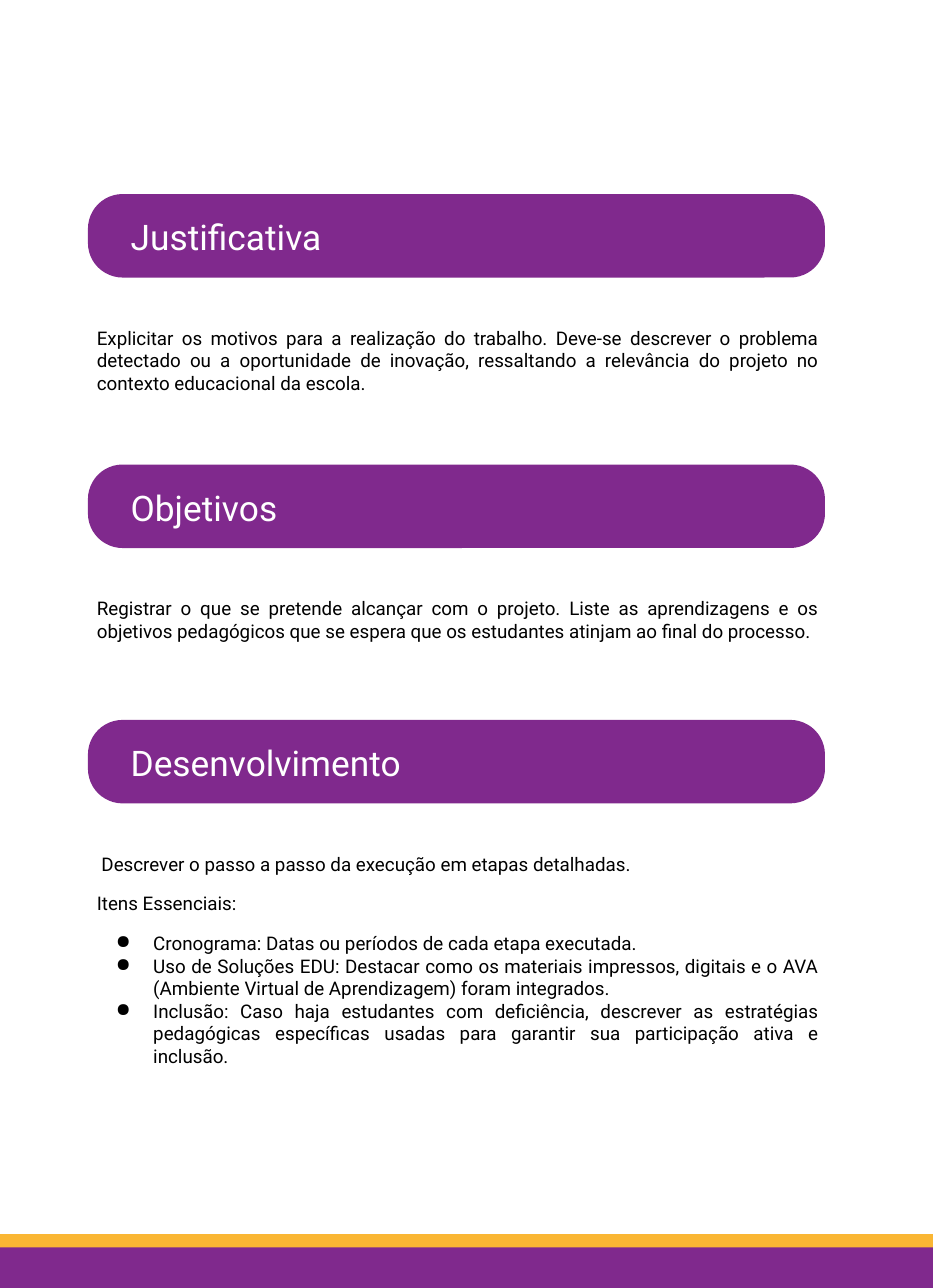
from lxml import etree
from pptx import Presentation
from pptx.dml.color import RGBColor
from pptx.enum.shapes import MSO_SHAPE
from pptx.enum.text import MSO_ANCHOR, MSO_AUTO_SIZE, PP_ALIGN
from pptx.oxml.ns import qn
from pptx.util import Cm, Pt

RECT, ROUND = MSO_SHAPE.RECTANGLE, MSO_SHAPE.ROUNDED_RECTANGLE
TOP, FIXED = MSO_ANCHOR.TOP, MSO_AUTO_SIZE.NONE
LEFT, JUSTIFY = PP_ALIGN.LEFT, PP_ALIGN.JUSTIFY

PURPLE = RGBColor(0x80, 0x29, 0x8D)
ORANGE = RGBColor(0xFA, 0xB6, 0x33)
WHITE = RGBColor(0xFF, 0xFF, 0xFF)
BLACK = RGBColor(0x00, 0x00, 0x00)

# Bar top, body height, heading, paragraphs as (text, space before, bullet)
SECTIONS = [
    (4.37, 4.93, "Justificativa", [
        ("Explicitar os motivos para a realização do trabalho. Deve-se "
         "descrever o problema detectado ou a oportunidade de inovação, "
         "ressaltando a relevância do projeto no contexto educacional da "
         "escola.", 0, False),
    ]),
    (10.46, 3.35, "Objetivos", [
        ("Registrar o que se pretende alcançar com o projeto. Liste as "
         "aprendizagens e os objetivos pedagógicos que se espera que os "
         "estudantes atinjam ao final do processo.", 0, False),
    ]),
    (16.21, 7.21, "Desenvolvimento", [
        (" Descrever o passo a passo da execução em etapas detalhadas.",
         0, False),
        ("Itens Essenciais:", 11, False),
        ("Cronograma: Datas ou períodos de cada etapa executada.", 11, True),
        ("Uso de Soluções EDU: Destacar como os materiais impressos, "
         "digitais e o AVA (Ambiente Virtual de Aprendizagem) foram "
         "integrados.", 0, True),
        ("Inclusão: Caso haja estudantes com deficiência, descrever as "
         "estratégias pedagógicas específicas usadas para garantir sua "
         "participação ativa e inclusão.", 0, True),
    ]),
]


class Page:
    font = "Roboto"

    def __init__(self, slide):
        self.shapes = slide.shapes

    def block(self, kind, x, y, w, h, color):
        shape = self.shapes.add_shape(kind, Cm(x), Cm(y), Cm(w), Cm(h))
        shape.shadow.inherit = False
        shape.fill.solid()
        shape.fill.fore_color.rgb = color
        shape.line.fill.background()
        return shape

    def frame(self, box):
        """Give a text box its margins, wrapping and top anchor."""
        frame = box.text_frame
        frame.word_wrap = True
        frame.auto_size = FIXED
        frame.vertical_anchor = TOP
        frame.margin_left = frame.margin_right = Cm(0.25)
        frame.margin_top = frame.margin_bottom = Cm(0.25)
        return frame

    def style(self, para, size, color, align):
        para.alignment = align
        para.font.name = self.font
        para.font.size = Pt(size)
        para.font.color.rgb = color

    def heading(self, top, text, title=None):
        """Draw a bar with its heading, in the title placeholder if given."""
        bar = self.block(ROUND, 1.98, top, 16.59, 1.88, PURPLE)
        bar.adjustments[0] = 0.415
        place = Cm(2.69), Cm(top + 0.23), Cm(14.86), Cm(1.47)
        if title is None:
            box = self.shapes.add_textbox(*place)
        else:
            box = title
            box.left, box.top, box.width, box.height = place
            bar._element.addnext(box._element)
        para = self.frame(box).paragraphs[0]
        para.text = text
        self.style(para, 22.5, WHITE, LEFT)

    def bullet(self, para):
        props = para._p.get_or_add_pPr()
        props.set("marL", str(Cm(1.27)))
        props.set("indent", str(Cm(-0.84)))
        etree.SubElement(props, qn("a:buChar")).set("char", "●")

    def body(self, top, height, items):
        box = self.shapes.add_textbox(Cm(1.93), Cm(top), Cm(16.76), Cm(height))
        frame = self.frame(box)
        for i, (text, space, dot) in enumerate(items):
            para = frame.add_paragraph() if i else frame.paragraphs[0]
            para.text = text
            if space:
                para.space_before = Pt(space)
            if dot:
                self.bullet(para)
            self.style(para, 12, BLACK, JUSTIFY)

    def footer(self):
        for height, color in ((1.27, PURPLE), (0.3, ORANGE)):
            self.block(RECT, -0.1, 27.79, 21.16, height, color)


def main():
    deck = Presentation()
    deck.slide_width, deck.slide_height = Cm(21), Cm(29)
    slide = deck.slides.add_slide(deck.slide_layouts[5])
    page = Page(slide)
    page.footer()
    title = slide.shapes.title
    for top, height, head, items in SECTIONS:
        page.heading(top, head, title)
        page.body(top + 2.73, height, items)
        title = None
    deck.save("out.pptx")


if __name__ == "__main__":
    main()
